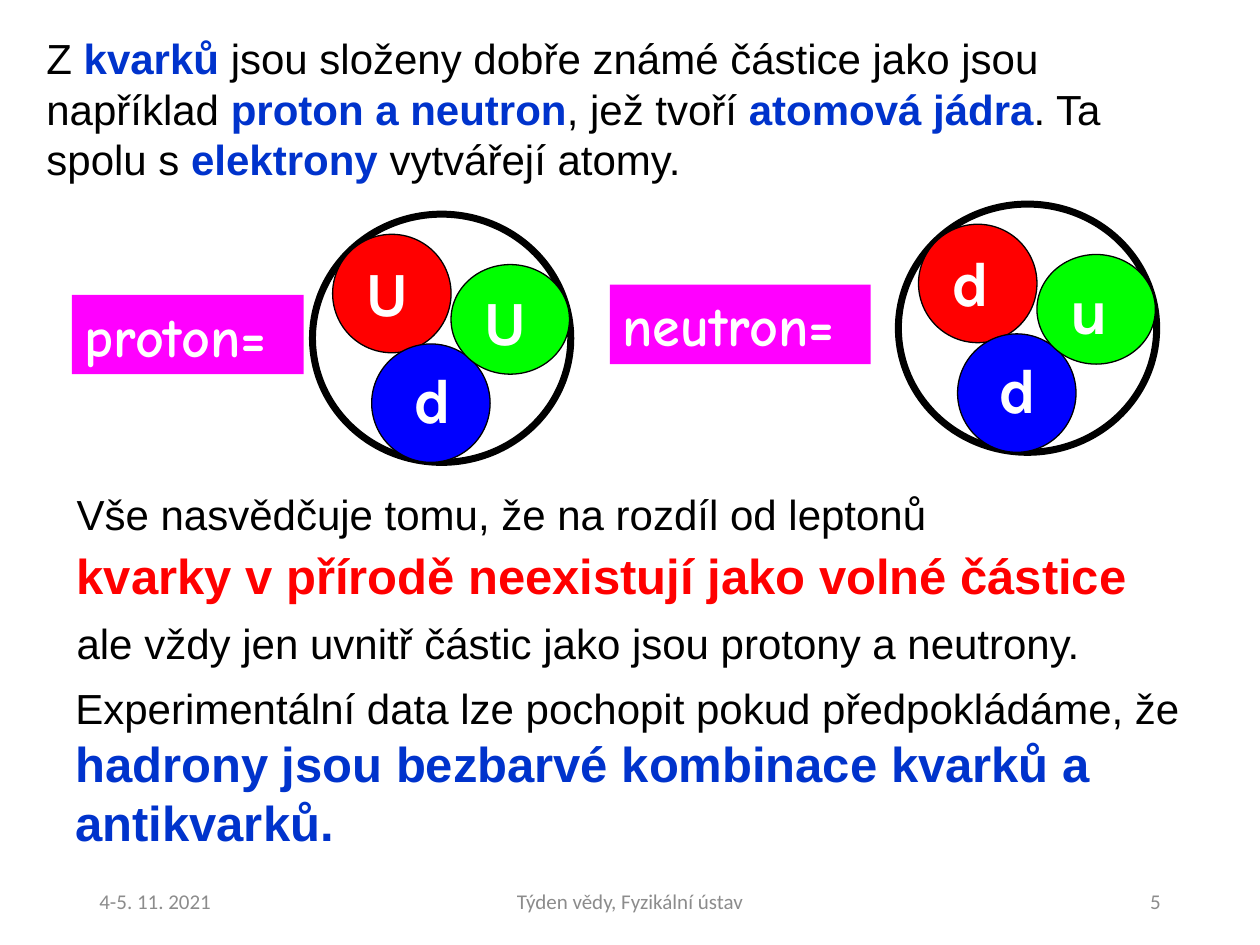
from typing import NamedTuple

from pptx import Presentation
from pptx.dml.color import RGBColor
from pptx.enum.shapes import MSO_SHAPE
from pptx.enum.text import MSO_ANCHOR, PP_ALIGN
from pptx.util import Inches, Pt

OVAL, RECT = MSO_SHAPE.OVAL, MSO_SHAPE.RECTANGLE
TOP, MIDDLE = MSO_ANCHOR.TOP, MSO_ANCHOR.MIDDLE
LEFT, CENTER, RIGHT = PP_ALIGN.LEFT, PP_ALIGN.CENTER, PP_ALIGN.RIGHT
COLORS = {
    "black": "000000", "white": "FFFFFF", "gray": "8C8C8C", "navy": "0033CC",
    "red": "FF0000", "green": "00FF00", "blue": "0000FF", "pink": "FF00FF",
}


class Box(NamedTuple):
    left: float
    top: float
    width: float
    height: float

    def shift(self, x: float, y: float) -> "Box":
        return Box(self.left + x, self.top + y, self.width, self.height)


class Style(NamedTuple):
    size: float
    name: str = "Arial"
    color: str = "black"
    bold: bool = False


class Span(NamedTuple):
    text: str
    style: Style


class Note(NamedTuple):
    box: Box
    spans: list[Span]
    wrap: bool = True
    align: PP_ALIGN = LEFT
    anchor: MSO_ANCHOR = TOP


class Quark(NamedTuple):
    box: Box
    color: str
    spot: tuple[float, float]


class Baryon(NamedTuple):
    left: float
    top: float
    quarks: str
    label: str
    plate: Box


PLAIN = Style(24)
KEY = Style(24, color="navy", bold=True)
LOUD = Style(28, color="red", bold=True)
CLAIM = Style(28, color="navy", bold=True)
LETTER = Style(36, "Karla", "white", True)
LABEL = Style(32, "Comic Neue", "white", True)
FOOT = Style(12, "Calibri", "gray")

QUARKS = [
    Quark(Box(0.16, 0.16, 0.94, 0.94), "red", (0.32, 0.26)),
    Quark(Box(0.47, 1.03, 0.94, 0.94), "blue", (0.7, 1.11)),
    Quark(Box(1.1, 0.4, 0.94, 0.87), "green", (1.26, 0.49)),
]
BARYONS = [
    Baryon(2.48, 1.7, "UdU", "proton=", Box(0.57, 2.34, 1.84, 0.63)),
    Baryon(7.13, 1.62, "ddu", "neutron=", Box(4.84, 2.26, 2.07, 0.63)),
]
NOTES = [
    Note(Box(0.27, 0.21, 8.9, 1.31), [
        Span("Z ", PLAIN), Span("kvarků ", KEY),
        Span("jsou složeny dobře známé částice jako jsou například ", PLAIN),
        Span("proton a neutron", KEY), Span(", jež tvoří ", PLAIN),
        Span("atomová jádra", KEY), Span(". Ta spolu s ", PLAIN),
        Span("elektrony", KEY), Span(" vytvářejí atomy.", PLAIN),
    ]),
    Note(Box(0.51, 3.83, 7.28, 0.5),
         [Span("Vše nasvědčuje tomu, že na rozdíl od leptonů", PLAIN)], False),
    Note(Box(0.51, 4.28, 8.98, 0.57),
         [Span("kvarky v přírodě neexistují jako volné částice", LOUD)], False),
    Note(Box(0.51, 4.85, 8.24, 0.5),
         [Span("ale vždy jen uvnitř částic jako jsou protony a neutrony.", PLAIN)],
         False),
    Note(Box(0.5, 5.37, 9.06, 1.45), [
        Span("Experimentální data lze pochopit pokud předpokládáme, že ", PLAIN),
        Span("hadrony jsou bezbarvé kombinace kvarků a antikvarků.", CLAIM),
    ]),
    Note(Box(0.69, 6.95, 2.25, 0.4), [Span("4-5. 11. 2021", FOOT)],
         anchor=MIDDLE),
    Note(Box(3.31, 6.95, 3.38, 0.4), [Span("Týden vědy, Fyzikální ústav", FOOT)],
         align=CENTER, anchor=MIDDLE),
    Note(Box(7.06, 6.95, 2.25, 0.4), [Span("5", FOOT)],
         align=RIGHT, anchor=MIDDLE),
]


def paint(name: str) -> RGBColor:
    """Return the named colour."""
    return RGBColor.from_string(COLORS[name])


def set_font(font, style: Style) -> None:
    """Apply a style to a font."""
    font.size, font.name, font.bold = Pt(style.size), style.name, style.bold
    font.color.rgb = paint(style.color)


def write(shape, note: Note) -> None:
    """Fill a shape with the spans of a note."""
    frame = shape.text_frame
    frame.word_wrap, frame.vertical_anchor = note.wrap, note.anchor
    line = frame.paragraphs[0]
    line.alignment = note.align
    shared = len({span.style for span in note.spans}) == 1
    if shared:
        set_font(line.font, note.spans[0].style)
    for span in note.spans:
        run = line.add_run()
        run.text = span.text
        if not shared:
            set_font(run.font, span.style)


def add_note(shapes, note: Note) -> None:
    """Add a text box."""
    write(shapes.add_textbox(*map(Inches, note.box)), note)


def add_form(shapes, kind: MSO_SHAPE, box: Box, fill: str = "", line: float = 0):
    """Add a preset shape with optional fill and black outline."""
    shape = shapes.add_shape(kind, *map(Inches, box))
    shape.shadow.inherit = False
    if fill:
        shape.fill.solid()
        shape.fill.fore_color.rgb = paint(fill)
    else:
        shape.fill.background()
    if line:
        shape.line.color.rgb = paint("black")
        shape.line.width = Pt(line)
    else:
        shape.line.fill.background()
    return shape


def add_baryon(shapes, item: Baryon) -> None:
    """Add a particle made of three quarks, with its label."""
    group = shapes.add_group_shape().shapes
    add_form(group, OVAL, Box(item.left, item.top, 2.05, 1.97), line=4)
    for quark in QUARKS:
        add_form(group, OVAL, quark.box.shift(item.left, item.top),
                 quark.color, 0.75)
    for quark, sign in zip(QUARKS, item.quarks):
        width = 0.56 if sign == "U" else 0.48
        box = Box(*quark.spot, width, 0.7).shift(item.left, item.top)
        add_note(group, Note(box, [Span(sign, LETTER)], False))
    plate = add_form(shapes, RECT, item.plate, "pink")
    write(plate, Note(item.plate, [Span(item.label, LABEL)]))


def main() -> None:
    """Build the slide."""
    deck = Presentation()
    deck.slide_width, deck.slide_height = Inches(10), Inches(7.5)
    shapes = deck.slides.add_slide(deck.slide_layouts[6]).shapes
    for item in BARYONS:
        add_baryon(shapes, item)
    for note in NOTES:
        add_note(shapes, note)
    deck.save("out.pptx")


if __name__ == "__main__":
    main()
